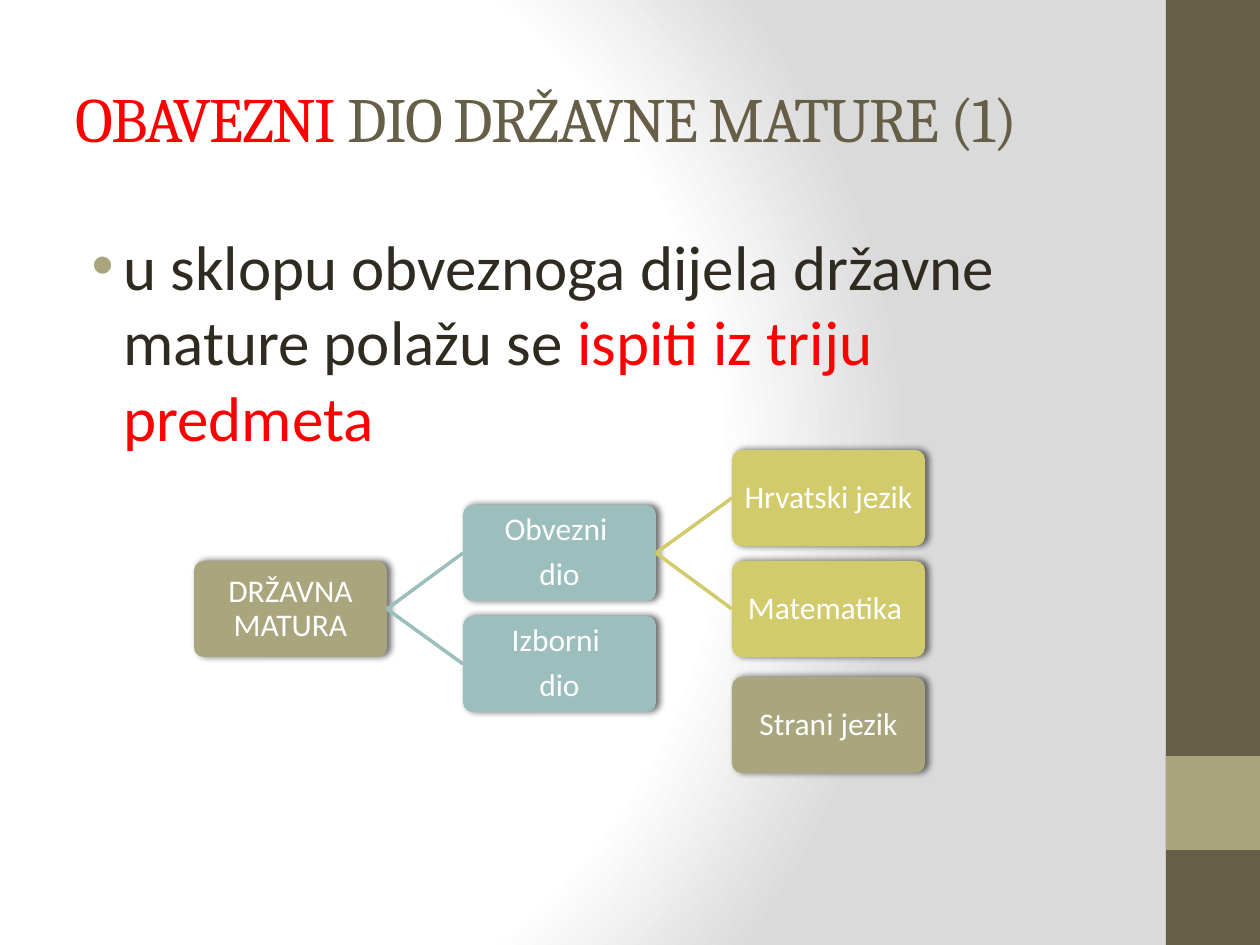
from pptx import Presentation, util as u
from pptx.dml.color import RGBColor
from pptx.enum import shapes, text
from pptx.oxml import parse_xml
from pptx.oxml.ns import nsdecls, qn

PX = 914400 // 126
WHITE = RGBColor(0xFF, 0xFF, 0xFF)
RED = RGBColor(0xFF, 0x00, 0x00)
BROWN = RGBColor(0x67, 0x5E, 0x47)
DARK = RGBColor(0x2F, 0x2B, 0x20)
OLIVE = RGBColor(0xA9, 0xA5, 0x7C)
TEAL = RGBColor(0x9C, 0xBE, 0xBD)
YELLOW = RGBColor(0xD2, 0xCB, 0x6C)

TITLE = [("OBAVEZNI", RED), (" DIO DRŽAVNE MATURE (1)", BROWN)]
BODY = [("u sklopu obveznoga dijela državne mature polažu se ", DARK),
        ("ispiti iz triju predmeta", RED)]
SIDEBAR = [(0, 945, BROWN), (756, 94, OLIVE)]  # top, height, colour
# key: paragraphs, column, top, colour, parent
BOXES = {
    "matura": (["DRŽAVNA MATURA"], 0, 561, OLIVE, None),
    "obvezni": (["Obvezni ", "dio"], 1, 505, TEAL, "matura"),
    "hrvatski": (["Hrvatski jezik"], 2, 450, YELLOW, "obvezni"),
    "matematika": (["Matematika "], 2, 561, YELLOW, "obvezni"),
    "izborni": (["Izborni ", "dio"], 1, 616, TEAL, "matura"),
    "strani": (["Strani jezik"], 2, 677, OLIVE, None),
}
BOX_LEFT, BOX_STEP, BOX_W, BOX_H = 194, 269, 193, 96

BACKGROUND = f"""<a:gradFill {nsdecls('a')} rotWithShape="1"><a:gsLst>
<a:gs pos="0"><a:srgbClr val="FFFFFF"/></a:gs>
<a:gs pos="75000"><a:srgbClr val="FFFFFF"/></a:gs>
<a:gs pos="100000"><a:srgbClr val="DADADA"/></a:gs></a:gsLst>
<a:path path="circle"><a:fillToRect l="20000" t="50000" r="100000" b="50000"/></a:path>
</a:gradFill>"""
SHADOW = f"""<a:effectLst {nsdecls('a')}>
<a:outerShdw blurRad="50800" dist="25400" dir="0" rotWithShape="0">
<a:srgbClr val="000000"><a:alpha val="60000"/></a:srgbClr></a:outerShdw></a:effectLst>"""


def px(*values):
    return [u.Emu(v * PX) for v in values]


def add_run(p, words, font, size, color):
    r = p.add_run()
    r.text = words
    r.font.name, r.font.size = font, u.Pt(size)
    r.font.color.rgb = color
    return r


def add_block(s, kind, left, top, width, height, color):
    sp = s.shapes.add_shape(kind, *px(left, top, width, height))
    sp.shadow.inherit = False
    sp.fill.solid()
    sp.fill.fore_color.rgb = color
    sp.line.fill.background()
    return sp


def add_text(s, top, height, runs, font, anchor):
    tf = s.shapes.add_textbox(*px(63, top, 1050, height)).text_frame
    tf.word_wrap = True
    tf.vertical_anchor = anchor
    p = tf.paragraphs[0]
    for words, color in runs:
        add_run(p, words, font, 36, color)
    return p


def add_box(s, lines, column, top, color):
    sp = add_block(s, shapes.MSO_SHAPE.ROUNDED_RECTANGLE,
                   BOX_LEFT + column * BOX_STEP, top, BOX_W, BOX_H, color)
    sp.adjustments[0] = 0.1
    props = sp.element.spPr
    props.replace(props.find(qn("a:effectLst")), parse_xml(SHADOW))
    tf = sp.text_frame
    tf.word_wrap = True
    tf.vertical_anchor = text.MSO_ANCHOR.MIDDLE
    tf.margin_left, tf.margin_top, tf.margin_right, tf.margin_bottom = px(1, 1, 1, 1)
    for i, line in enumerate(lines):
        p = tf.add_paragraph() if i else tf.paragraphs[0]
        p.alignment = text.PP_ALIGN.CENTER
        p.line_spacing, p.space_after = 0.9, u.Pt(6)
        add_run(p, line, "Calibri", 18, WHITE)
    return sp


def join(s, parent, child, color):
    line = s.shapes.add_connector(shapes.MSO_CONNECTOR.STRAIGHT, 0, 0, 0, 0)
    line.begin_connect(parent, 3)
    line.end_connect(child, 1)
    line.line.color.rgb, line.line.width = color, u.Pt(2)
    line.element.spPr.append(parse_xml(f"<a:effectLst {nsdecls('a')}/>"))


def main():
    prs = Presentation()
    prs.slide_width, prs.slide_height = px(1260, 945)
    s = prs.slides.add_slide(prs.slide_layouts[6])
    s.background.fill.gradient()
    grad = next(s.element.iter(qn("a:gradFill")))
    grad.getparent().replace(grad, parse_xml(BACKGROUND))

    for top, height, color in SIDEBAR:
        add_block(s, shapes.MSO_SHAPE.RECTANGLE, 1166, top, 94, height, color)

    title = add_text(s, 38, 158, TITLE, "Cambria", text.MSO_ANCHOR.MIDDLE)
    for r in title.runs:
        r.font._element.set("spc", "-100")

    body = add_text(s, 221, 661, BODY, "Calibri", text.MSO_ANCHOR.TOP)
    body.space_before = u.Pt(7)
    props = body._p.get_or_add_pPr()
    props.set("marL", str(u.Inches(0.38)))
    props.set("indent", str(u.Inches(-0.25)))
    for bullet in (f'<a:buClr {nsdecls("a")}><a:srgbClr val="{OLIVE}"/></a:buClr>',
                   f'<a:buFont {nsdecls("a")} typeface="Arial"/>',
                   f'<a:buChar {nsdecls("a")} char="•"/>'):
        props.append(parse_xml(bullet))

    placed = {}
    for key, (lines, column, top, color, parent) in BOXES.items():
        placed[key] = add_box(s, lines, column, top, color)
        if parent:
            join(s, placed[parent], placed[key], color)

    prs.save("out.pptx")


if __name__ == "__main__":
    main()
